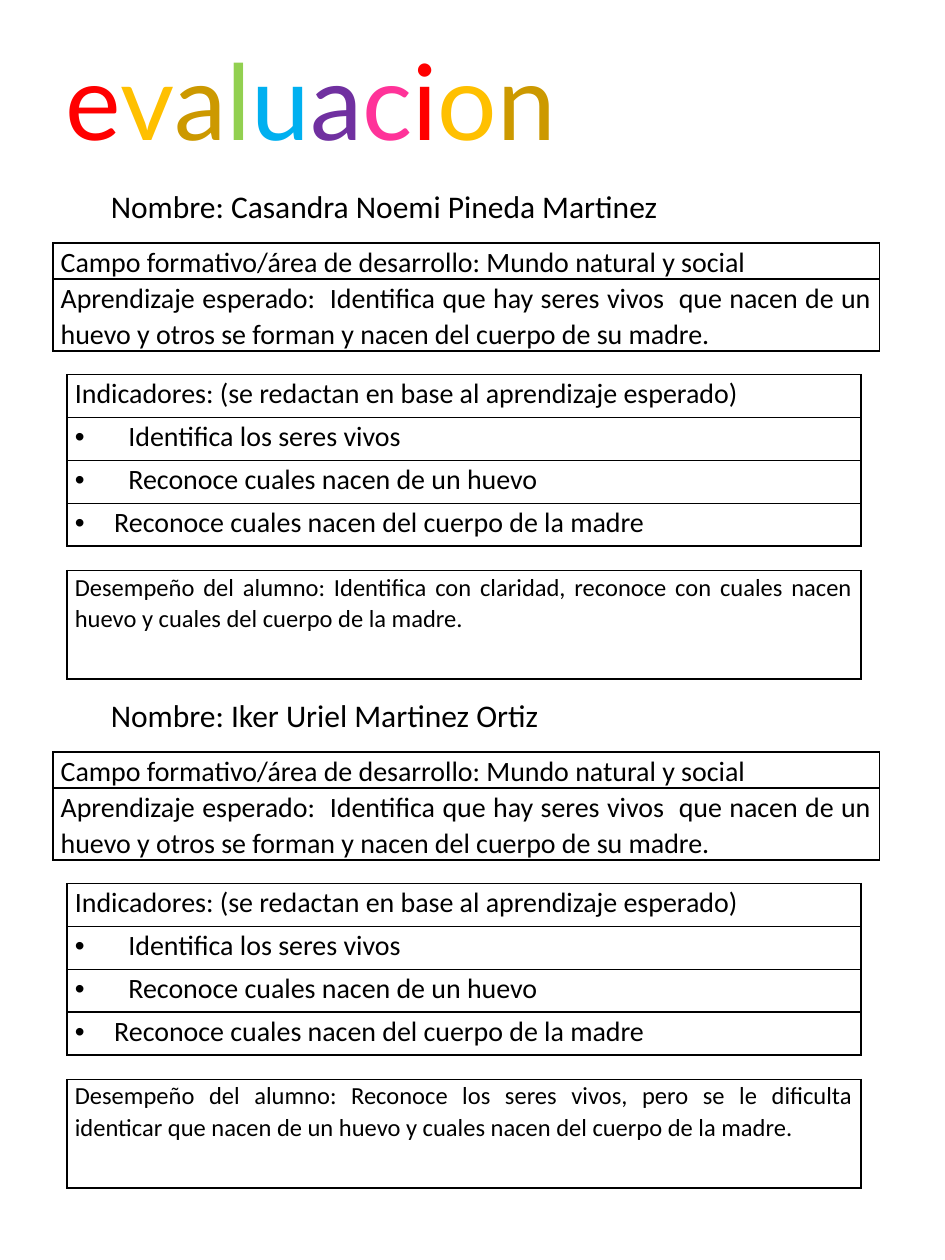
from lxml.etree import SubElement
from pptx import Presentation
from pptx.dml.color import RGBColor
from pptx.enum.text import MSO_AUTO_SIZE, PP_ALIGN
from pptx.oxml.ns import qn
from pptx.util import Pt

BLACK = RGBColor(0x00, 0x00, 0x00)
RED = RGBColor(0xFF, 0x00, 0x00)
AMBER = RGBColor(0xFF, 0xC0, 0x00)
OCHRE = RGBColor(0xCC, 0x99, 0x00)
GREEN = RGBColor(0x92, 0xD0, 0x50)
BLUE = RGBColor(0x00, 0xB0, 0xF0)
PURPLE = RGBColor(0x70, 0x30, 0xA0)
PINK = RGBColor(0xFF, 0x33, 0x99)

TITLE = "evaluacion"
TITLE_COLORS = [RED, AMBER, OCHRE, GREEN, BLUE, PURPLE, PINK, RED, AMBER, OCHRE]

FIELD_ROWS = [
    ("Campo formativo/área de desarrollo: Mundo natural y social", 0),
    ("Aprendizaje esperado:  Identifica que hay seres vivos  que nacen de un huevo "
     "y otros se forman y nacen del cuerpo de su madre.", 0),
]
INDICATOR_ROWS = [
    ("Indicadores: (se redactan en base al aprendizaje esperado)", 0),
    (" Identifica los seres vivos", 27),
    (" Reconoce cuales nacen de un huevo", 27),
    ("Reconoce cuales nacen del cuerpo de la madre", 22.5),
]
STUDENTS = [
    ("Nombre: Casandra Noemi Pineda Martinez", 330.5,
     "Desempeño del alumno: Identifica con claridad, reconoce con cuales nacen "
     "huevo y cuales del cuerpo de la madre."),
    ("Nombre: Iker Uriel Martinez Ortiz", 262,
     "Desempeño del alumno: Reconoce los seres vivos, pero se le dificulta "
     "identicar que nacen de un huevo y cuales nacen del cuerpo de la madre."),
]
FIRST_TOP = 103.1
STUDENT_STEP = 290.8


class EvaluationSheet:
    title_font = "Lato"
    body_font = "Calibri"
    border_width = 1
    cell_margin = 4.5
    line_spacing = 1.07

    def __init__(self, slide):
        self.slide = slide

    def format_run(self, run, font, size, color):
        run.font.name = font
        run.font.size = Pt(size)
        run.font.color.rgb = color

    def text_box(self, left, top, width, height, wrap):
        shape = self.slide.shapes.add_textbox(Pt(left), Pt(top), Pt(width), Pt(height))
        shape.text_frame.word_wrap = wrap
        shape.text_frame.auto_size = MSO_AUTO_SIZE.SHAPE_TO_FIT_TEXT
        return shape.text_frame

    def title(self, text, colors, left, top, width, height):
        paragraph = self.text_box(left, top, width, height, True).paragraphs[0]
        for letter, color in zip(text, colors):
            run = paragraph.add_run()
            run.text = letter
            self.format_run(run, self.title_font, 60, color)

    def name(self, text, left, top, width, height):
        text_frame = self.text_box(left, top, width, height, False)
        text_frame.text = text
        self.format_run(text_frame.paragraphs[0].runs[0], self.body_font, 18, BLACK)

    def table(self, rows, left, top, width, heights, size):
        frame = self.slide.shapes.add_table(
            len(rows), 1, Pt(left), Pt(top), Pt(width), Pt(sum(heights)))
        table = frame.table
        table.first_row = False
        table.horz_banding = False
        for index, (text, indent) in enumerate(rows):
            table.rows[index].height = Pt(heights[index])
            self.cell(table.cell(index, 0), text, indent, size)

    def cell(self, cell, text, indent, size):
        cell.margin_left = cell.margin_right = Pt(self.cell_margin)
        cell.margin_top = cell.margin_bottom = 0
        self.borders(cell)
        cell.fill.background()
        cell.text_frame.text = text
        paragraph = cell.text_frame.paragraphs[0]
        paragraph.alignment = PP_ALIGN.JUSTIFY
        paragraph.line_spacing = self.line_spacing
        self.format_run(paragraph.runs[0], self.body_font, size, BLACK)
        if indent:
            self.bullet(paragraph, indent)

    def borders(self, cell):
        properties = cell._tc.get_or_add_tcPr()
        for side in ("a:lnL", "a:lnR", "a:lnT", "a:lnB"):
            line = SubElement(properties, qn(side), w=str(Pt(self.border_width)))
            fill = SubElement(line, qn("a:solidFill"))
            SubElement(fill, qn("a:srgbClr"), val=str(BLACK))

    def bullet(self, paragraph, indent):
        properties = paragraph._p.get_or_add_pPr()
        properties.set("marL", str(Pt(indent)))
        properties.set("indent", str(-Pt(indent)))
        SubElement(properties, qn("a:buFont"), typeface="Arial")
        SubElement(properties, qn("a:buChar"), char="•")


def main():
    presentation = Presentation()
    presentation.slide_width = Pt(540)
    presentation.slide_height = Pt(720)
    sheet = EvaluationSheet(presentation.slides.add_slide(presentation.slide_layouts[6]))

    sheet.title(TITLE, TITLE_COLORS, 30.2, 16.6, 643.7, 80)
    for index, (name, name_width, performance) in enumerate(STUDENTS):
        top = FIRST_TOP + index * STUDENT_STEP
        sheet.table(FIELD_ROWS, 30.2, top + 35.8, 472.3, [20.5, 41], 16)
        sheet.table(INDICATOR_ROWS, 38.3, top + 111, 453.6, [24.5] * 4, 16)
        sheet.table([(performance, 0)], 38.3, top + 223, 453.6, [62], 14)
        sheet.name(name, 56.2, top, name_width, 29)

    presentation.save("out.pptx")


if __name__ == "__main__":
    main()
